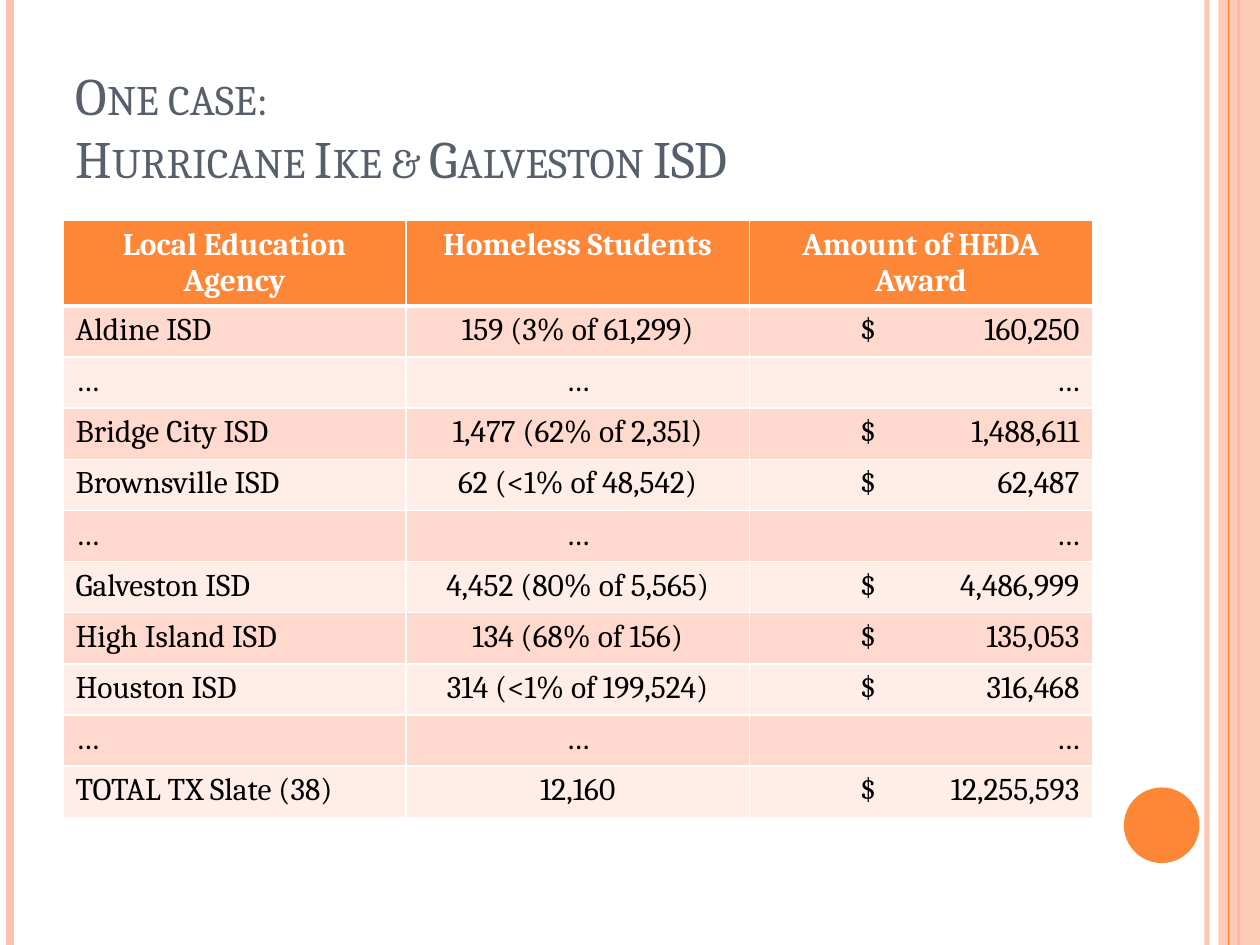
from dataclasses import dataclass
from typing import Optional

import lxml.etree
import pptx
import pptx.dml.color
import pptx.enum.shapes
import pptx.enum.text
import pptx.oxml.ns
import pptx.util

Inches = pptx.util.Inches
Pt = pptx.util.Pt
qn = pptx.oxml.ns.qn
Align = pptx.enum.text.PP_ALIGN
ShapeType = pptx.enum.shapes.MSO_SHAPE

FONT = "Cambria"
ORANGE = "FE8637"
PEACH = "FEC3AE"
SLATE = "575F6D"
WHITE = "FFFFFF"
BLACK = "000000"
BANDS = ("FFD9CE", "FFEDE8")


@dataclass
class Rule:
    x: float
    color: str
    weight: float
    opacity: Optional[int] = None


@dataclass
class Panel:
    kind: pptx.enum.shapes.MSO_SHAPE
    left: float
    top: float
    width: float
    height: float
    color: str
    opacity: Optional[int] = None


@dataclass
class Agency:
    name: str
    students: str
    award: str


DECORATIONS = (
    Rule(9.58, PEACH, 3, 93),
    Rule(0.08, PEACH, 4.5),
    Rule(9.83, ORANGE, 1.5),
    Panel(ShapeType.RECTANGLE, 9.67, 0, 0.33, 7.5, PEACH, 87),
    Rule(9.75, ORANGE, 0.75),
    Panel(ShapeType.OVAL, 8.92, 6.25, 0.6, 0.6, ORANGE),
)
TITLE_LINES = ("One case:", "Hurricane Ike & Galveston ISD")
HEADERS = ("Local Education Agency", "Homeless Students", "Amount of HEDA Award")
ELLIPSIS = Agency("…", "…", "…")
AGENCIES = (
    Agency("Aldine ISD", "159 (3% of 61,299)", "160,250"),
    ELLIPSIS,
    Agency("Bridge City ISD", "1,477 (62% of 2,35l)", "1,488,611"),
    Agency("Brownsville ISD", "62 (<1% of 48,542)", "62,487"),
    ELLIPSIS,
    Agency("Galveston ISD", "4,452 (80% of 5,565)", "4,486,999"),
    Agency("High Island ISD", "134 (68% of 156)", "135,053"),
    Agency("Houston ISD", "314 (<1% of 199,524)", "316,468"),
    ELLIPSIS,
    Agency("TOTAL TX Slate (38)", "12,160", "12,255,593"),
)


def rgb(color: str) -> pptx.dml.color.RGBColor:
    return pptx.dml.color.RGBColor.from_string(color)


def set_opacity(element, opacity: Optional[int]) -> None:
    if opacity is not None:
        color = next(element.iter(qn("a:srgbClr")))
        lxml.etree.SubElement(color, qn("a:alpha"), val=str(opacity * 1000))


def draw_rule(slide, rule: Rule) -> None:
    x = Inches(rule.x)
    connector = slide.shapes.add_connector(
        pptx.enum.shapes.MSO_CONNECTOR.STRAIGHT, x, 0, x, Inches(7.5))
    connector.line.color.rgb = rgb(rule.color)
    connector.line.width = Pt(rule.weight)
    properties = connector._element.spPr
    set_opacity(properties, rule.opacity)
    lxml.etree.SubElement(properties, qn("a:effectLst"))


def draw_panel(slide, panel: Panel) -> None:
    shape = slide.shapes.add_shape(
        panel.kind, Inches(panel.left), Inches(panel.top),
        Inches(panel.width), Inches(panel.height))
    shape.shadow.inherit = False
    shape.fill.solid()
    shape.fill.fore_color.rgb = rgb(panel.color)
    shape.line.fill.background()
    set_opacity(shape._element.spPr, panel.opacity)


def add_run(paragraph, text: str, size: float, color: str, bold: bool = False):
    run = paragraph.add_run()
    run.text = text
    run.font.name = FONT
    run.font.size = Pt(size)
    run.font.bold = bold
    run.font.color.rgb = rgb(color)
    return run


def draw_title(slide) -> None:
    title = slide.shapes.title
    title.left, title.top = Inches(0.5), Inches(0.3)
    title.width, title.height = Inches(8.17), Inches(1.25)
    frame = title.text_frame
    frame.word_wrap = True
    frame.auto_size = pptx.enum.text.MSO_AUTO_SIZE.NONE
    frame.vertical_anchor = pptx.enum.text.MSO_ANCHOR.BOTTOM
    paragraph = frame.paragraphs[0]
    paragraph.alignment = Align.LEFT
    for index, line in enumerate(TITLE_LINES):
        if index:
            paragraph.add_line_break()
        run = add_run(paragraph, line, 30, SLATE)
        run.font._element.set("cap", "small")


def set_borders(cell, bottom: float) -> None:
    properties = cell._tc.get_or_add_tcPr()
    for side, weight in (("L", 1), ("R", 1), ("T", 1), ("B", bottom)):
        line = lxml.etree.SubElement(properties, qn(f"a:ln{side}"), w=str(Pt(weight)))
        fill = lxml.etree.SubElement(line, qn("a:solidFill"))
        lxml.etree.SubElement(fill, qn("a:srgbClr"), val=WHITE)


def fill_cell(cell, text: str, alignment: Align, fill: str, color: str,
              header: bool = False):
    set_borders(cell, 3 if header else 1)
    cell.fill.solid()
    cell.fill.fore_color.rgb = rgb(fill)
    paragraph = cell.text_frame.paragraphs[0]
    paragraph.alignment = alignment
    add_run(paragraph, text, 18, color, header)
    return paragraph


def set_award_tabs(paragraph) -> None:
    tabs = lxml.etree.SubElement(paragraph._p.get_or_add_pPr(), qn("a:tabLst"))
    for position, alignment in ((0.78, "l"), (2.52, "r")):
        lxml.etree.SubElement(
            tabs, qn("a:tab"), pos=str(Inches(position)), algn=alignment)


def draw_table(slide) -> None:
    table = slide.shapes.add_table(
        len(AGENCIES) + 1, len(HEADERS), Inches(0.5), Inches(1.75),
        Inches(8.17), Inches(4.73)).table
    for column in table.columns:
        column.width = Inches(8.17 / len(HEADERS))
    for row in table.rows:
        row.height = Inches(4.06 / len(AGENCIES))
    table.rows[0].height = Inches(0.67)

    for index, header in enumerate(HEADERS):
        fill_cell(table.cell(0, index), header, Align.CENTER, ORANGE, WHITE, True)
    for index, agency in enumerate(AGENCIES):
        name, students, award = table.rows[index + 1].cells
        band = BANDS[index % 2]
        fill_cell(name, agency.name, Align.LEFT, band, BLACK)
        fill_cell(students, agency.students, Align.CENTER, band, BLACK)
        if agency is ELLIPSIS:
            fill_cell(award, agency.award, Align.RIGHT, band, BLACK)
        else:
            text = f"\t$\t{agency.award}"
            set_award_tabs(fill_cell(award, text, Align.LEFT, band, BLACK))


def main() -> None:
    presentation = pptx.Presentation()
    presentation.slide_width = Inches(10)
    presentation.slide_height = Inches(7.5)
    slide = presentation.slides.add_slide(presentation.slide_layouts[5])
    for decoration in DECORATIONS:
        if isinstance(decoration, Rule):
            draw_rule(slide, decoration)
        else:
            draw_panel(slide, decoration)
    draw_title(slide)
    draw_table(slide)
    presentation.save("out.pptx")


if __name__ == "__main__":
    main()
